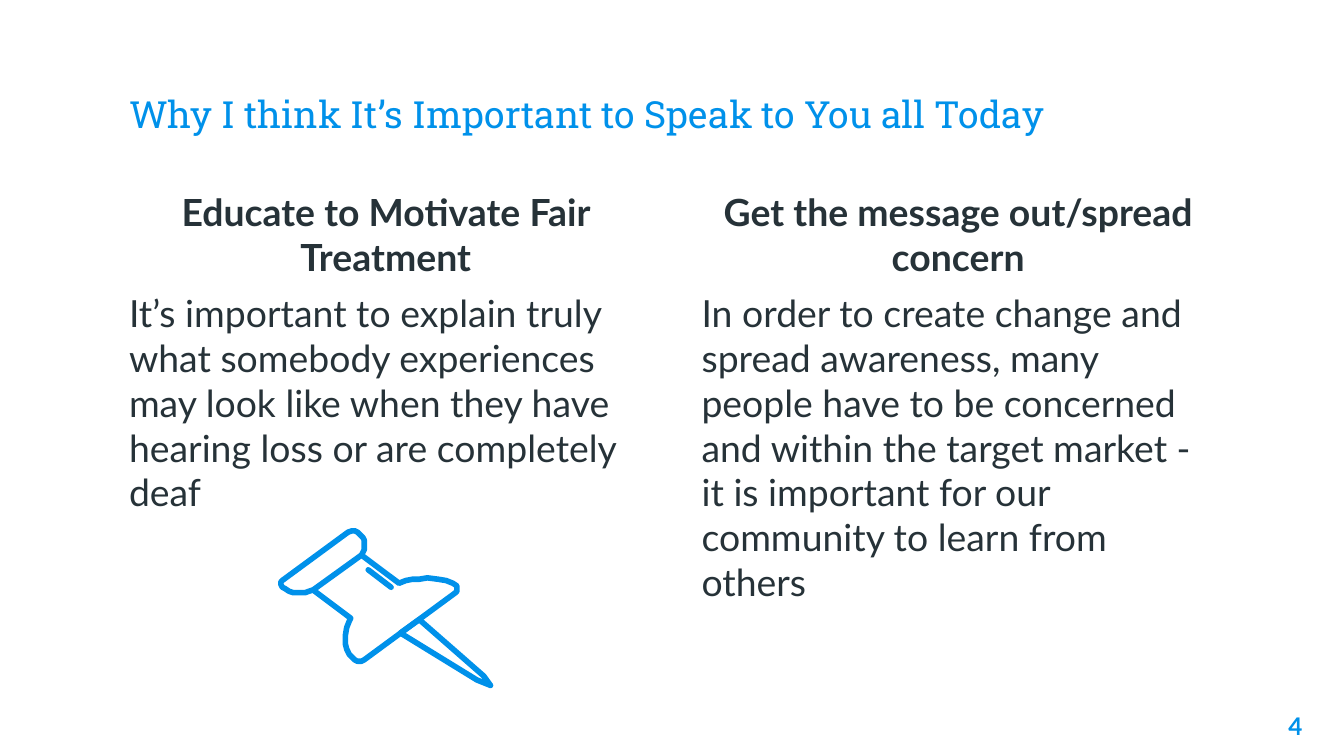
from dataclasses import dataclass

from lxml.etree import SubElement
from pptx import Presentation
from pptx.dml.color import RGBColor
from pptx.enum.shapes import MSO_CONNECTOR as Connector
from pptx.enum.text import MSO_ANCHOR as Anchor, MSO_AUTO_SIZE as AutoSize, PP_ALIGN as Align
from pptx.oxml.ns import qn
from pptx.util import Inches, Pt


@dataclass(frozen=True)
class Theme:
    """Colours, fonts, type sizes and line width."""
    accent: RGBColor = RGBColor(0x00, 0x91, 0xEA)
    ink: RGBColor = RGBColor(0x26, 0x32, 0x38)
    heading_font: str = "Roboto Slab"
    body_font: str = "Lato"
    text_size: Pt = Pt(20)
    number_size: Pt = Pt(13)
    paragraph_gap: Pt = Pt(6)
    outline: Pt = Pt(3)


THEME = Theme()
WIDTH = 10
HEIGHT = WIDTH * 9 / 16
MARGIN, GUTTER = 0.86, 0.24
COLUMN = (WIDTH - 2 * MARGIN - GUTTER) / 2
NUMBER_HEIGHT = 0.43
UNITS_PER_INCH = 100

TITLE = "Why I think It’s Important to Speak to You all Today"
REASONS = [
    ("Educate to Motivate Fair Treatment",
     "It’s important to explain truly what somebody experiences may look like "
     "when they have hearing loss or are completely deaf"),
    ("Get the message out/spread concern",
     "In order to create change and spread awareness, many people have to be "
     "concerned and within the target market - it is important for our "
     "community to learn from others"),
]

NEEDLE = [(312, 461), (360, 503), (365, 510), (355, 506), (298, 471)]
CAP = [(269, 413), (233, 439), (230, 440), (227, 441), (218, 441), (215, 440),
       (212, 438), (210, 437), (209, 435), (209, 433), (210, 432), (259, 396),
       (262, 395), (264, 395), (266, 396), (268, 398), (270, 400), (271, 402),
       (271, 409), (270, 411)]
GRIP = [(269, 413), (297, 434), (302, 432), (307, 431), (312, 431), (318, 430),
        (326, 431), (332, 432), (337, 434), (340, 436), (340, 440), (339, 441),
        (271, 491), (269, 492), (266, 492), (264, 491), (262, 489), (260, 487),
        (258, 483), (257, 479), (257, 473), (258, 467), (260, 462), (261, 460),
        (233, 439)]
SHINE = [(274, 424), (291, 437)]


def place(box, left, top, width, height):
    """Set position, insets and wrapping of a text holder."""
    box.left, box.top = Inches(left), Inches(top)
    box.width, box.height = Inches(width), Inches(height)
    frame = box.text_frame
    frame.word_wrap = True
    frame.auto_size = AutoSize.NONE
    frame.margin_left = frame.margin_right = Inches(0.1)
    frame.margin_top = frame.margin_bottom = Inches(0.1)
    return frame


def style(paragraph, font_name, size, color, bold=False, align=Align.LEFT):
    """Format a paragraph and its runs."""
    paragraph.alignment = align
    for run in paragraph.runs:
        font = run.font
        font.name, font.size, font.bold = font_name, size, bold
        font.color.rgb = color


def fill_title(title):
    """Write the slide title."""
    frame = place(title, MARGIN, 0.34, WIDTH - 2 * MARGIN, 0.77)
    frame.vertical_anchor = Anchor.BOTTOM
    frame.text = TITLE
    style(frame.paragraphs[0], THEME.heading_font, THEME.text_size, THEME.accent)


def fill_reason(body, column, heading, explanation):
    """Write a heading and its explanation in one column."""
    frame = place(body, MARGIN + column * (COLUMN + GUTTER), 1.31, COLUMN, 4.07)
    frame.text = f"{heading}\n{explanation}"
    for index, paragraph in enumerate(frame.paragraphs):
        properties = paragraph._p.get_or_add_pPr()
        properties.set("marL", "0")
        properties.set("indent", "0")
        SubElement(properties, qn("a:buNone"))
        paragraph.space_before = THEME.paragraph_gap if index else Pt(0)
        is_heading = index == 0
        style(paragraph, THEME.body_font, THEME.text_size, THEME.ink, is_heading,
              Align.CENTER if is_heading else Align.LEFT)


def add_page_number(slide, number):
    """Write the page number in the bottom right corner."""
    box = slide.shapes.add_textbox(0, 0, 0, 0)
    frame = place(box, 9.19, HEIGHT - NUMBER_HEIGHT, 0.6, NUMBER_HEIGHT)
    frame.text = str(number)
    style(frame.paragraphs[0], THEME.body_font, THEME.number_size, THEME.accent,
          True, Align.RIGHT)


def draw_stroke(stroke):
    """Give a stroke its colour, width, round ends and no shadow."""
    stroke.line.color.rgb = THEME.accent
    stroke.line.width = THEME.outline
    properties = stroke._element.spPr
    outline = properties.find(qn("a:ln"))
    outline.set("cap", "rnd")
    SubElement(outline, qn("a:round"))
    SubElement(properties, qn("a:effectLst"))


def add_outline(pin, points, close=True):
    """Draw one unfilled part of the pushpin."""
    builder = pin.shapes.build_freeform(*points[0], scale=Inches(1) / UNITS_PER_INCH)
    builder.add_line_segments(points[1:], close=close)
    part = builder.convert_to_shape()
    part.fill.background()
    draw_stroke(part)


def add_pushpin(slide):
    """Draw the pushpin as a group of outlines."""
    pin = slide.shapes.add_group_shape()
    add_outline(pin, NEEDLE)
    add_outline(pin, CAP)
    add_outline(pin, GRIP, close=False)
    ends = [Inches(value / UNITS_PER_INCH) for point in SHINE for value in point]
    draw_stroke(pin.shapes.add_connector(Connector.STRAIGHT, *ends))


def main():
    """Build and save the slide."""
    deck = Presentation()
    deck.slide_width, deck.slide_height = Inches(WIDTH), Inches(HEIGHT)
    slide = deck.slides.add_slide(deck.slide_layouts.get_by_name("Two Content"))
    title, *bodies = slide.placeholders
    fill_title(title)
    for column, (body, reason) in enumerate(zip(bodies, REASONS)):
        fill_reason(body, column, *reason)
    add_page_number(slide, 4)
    add_pushpin(slide)
    deck.save("out.pptx")


if __name__ == "__main__":
    main()
